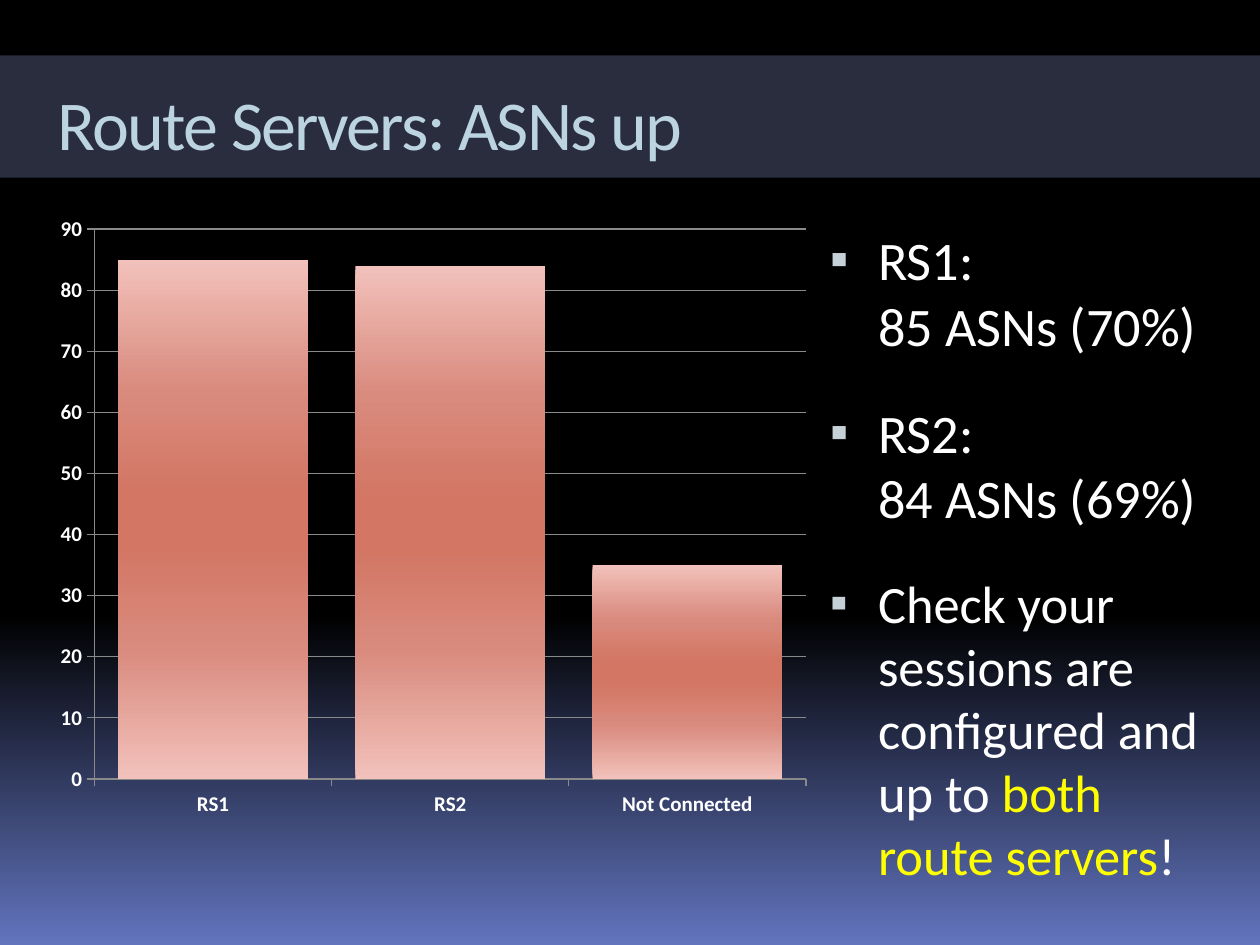
"""Build the route server status slide with its chart and bullet list."""
from dataclasses import dataclass

import pptx
import pptx.chart.data
import pptx.dml.color
import pptx.enum.chart
import pptx.enum.shapes
import pptx.enum.text
import pptx.oxml
import pptx.oxml.ns
import pptx.util

Inches = pptx.util.Inches
Pt = pptx.util.Pt
FONT = "Calibri"
COLORS = {
    "black": "000000", "sky": "6274BE", "band": "68729B", "title": "BCD4E0",
    "white": "FFFFFF", "accent": "FFFF00", "bullet": "C5D1D7", "axis": "8A8A8A",
    "bar_edge": "F2C1BB", "bar_soft": "D98B7E", "bar_core": "D37664",
}
BACKGROUND_STOPS = [(0, "black"), (65, "black"), (100, "sky")]
BAR_STOPS = [(0, "bar_edge"), (25, "bar_soft"), (45, "bar_core"),
             (55, "bar_core"), (75, "bar_soft"), (100, "bar_edge")]


@dataclass
class Span:
    text: str
    size: float
    color: str = "white"


BULLETS = [
    [Span("RS1:\n85 ASNs (70%)", 31)],
    [Span("RS2:\n84 ASNs (69%)", 31)],
    [Span("Check your sessions are configured and up to ", 30),
     Span("both route servers", 30, "accent"), Span("!", 30)],
]


def rgb(name: str) -> pptx.dml.color.RGBColor:
    """Return a named colour."""
    return pptx.dml.color.RGBColor.from_string(COLORS[name])


def add_xml(parent, tag: str, **attributes: str):
    """Append a drawing element with its attributes."""
    child = pptx.oxml.parse_xml(f"<a:{tag} {pptx.oxml.ns.nsdecls('a')}/>")
    for key, value in attributes.items():
        child.set(key, value)
    parent.append(child)
    return child


def set_attributes(target, values: dict) -> None:
    """Set every value on the target."""
    for key, value in values.items():
        setattr(target, key, value)


def set_gradient(fill, owner, stops: list) -> None:
    """Give a fill a top-down gradient."""
    fill.gradient()
    fill.gradient_angle = 270
    stop_list = owner.xpath(".//a:gsLst")[0]
    for old in list(stop_list):
        stop_list.remove(old)
    for position, name in stops:
        stop = add_xml(stop_list, "gs", pos=str(position * 1000))
        add_xml(stop, "srgbClr", val=COLORS[name])


def add_band(page) -> None:
    """Draw the translucent band behind the title."""
    band = page.shapes.add_shape(
        pptx.enum.shapes.MSO_SHAPE.RECTANGLE,
        Inches(0), Inches(0.44), Inches(10), Inches(0.97))
    band.shadow.inherit = False
    band.fill.solid()
    band.fill.fore_color.rgb = rgb("band")
    band.line.fill.background()
    color = band._element.spPr.xpath("./a:solidFill/a:srgbClr")[0]
    add_xml(color, "alpha", val="40000")


def add_text_box(page, bounds: tuple, insets: dict):
    """Add a wrapping text box and return its frame."""
    box = page.shapes.add_textbox(*map(Inches, bounds))
    frame = box.text_frame
    set_attributes(frame, {
        "word_wrap": True, "vertical_anchor": pptx.enum.text.MSO_ANCHOR.TOP,
        **{key: Inches(value) for key, value in insets.items()}})
    return frame


def add_span(para, span: Span) -> None:
    """Add formatted text, turning newlines into line breaks."""
    for index, line in enumerate(span.text.split("\n")):
        if index:
            para.add_line_break()
        run = para.add_run()
        run.text = line
        set_attributes(run.font, {"name": FONT, "size": Pt(span.size)})
        run.font.color.rgb = rgb(span.color)


def add_title(page) -> None:
    """Write the slide title."""
    frame = add_text_box(page, (0.39, 0.56, 9.11, 1),
                         {"margin_left": 0.07, "margin_top": 0.08})
    para = frame.paragraphs[0]
    add_span(para, Span("Route Servers: ASNs up", 40, "title"))
    para.runs[0].font._element.set("spc", "-100")


def add_bullets(page) -> None:
    """Write the bullet list beside the chart."""
    frame = add_text_box(page, (6.42, 1.75, 3.39, 5.15), {"margin_top": 0.05})
    for index, spans in enumerate(BULLETS):
        para = frame.add_paragraph() if index else frame.paragraphs[0]
        para.space_before = Pt(24)
        properties = para._p.get_or_add_pPr()
        properties.set("marL", str(Inches(0.45)))
        properties.set("indent", str(Inches(-0.38)))
        add_xml(add_xml(properties, "buClr"), "srgbClr", val=COLORS["bullet"])
        add_xml(properties, "buSzPct", val="95000")
        add_xml(properties, "buFont", typeface=FONT)
        add_xml(properties, "buChar", char="▪")
        for span in spans:
            add_span(para, span)


def add_layout(chart) -> None:
    """Fix the inner plot area inside the chart."""
    values = {"x": 0.065, "y": 0.04, "w": 0.92, "h": 0.88}
    parts = '<c:layoutTarget val="inner"/><c:xMode val="edge"/><c:yMode val="edge"/>'
    parts += "".join(f'<c:{key} val="{value}"/>' for key, value in values.items())
    layout = pptx.oxml.parse_xml(
        f"<c:layout {pptx.oxml.ns.nsdecls('c')}>"
        f"<c:manualLayout>{parts}</c:manualLayout></c:layout>")
    plot_area = chart._chartSpace.xpath(".//c:plotArea")[0]
    for old in plot_area.xpath("./c:layout"):
        plot_area.remove(old)
    plot_area.insert(0, layout)


def add_bar_chart(page) -> None:
    """Draw the column chart of connected networks."""
    data = pptx.chart.data.CategoryChartData()
    data.categories = ["RS1", "RS2", "Not Connected"]
    data.add_series("Series 1", [85, 84, 35])
    chart = page.shapes.add_chart(
        pptx.enum.chart.XL_CHART_TYPE.COLUMN_CLUSTERED,
        Inches(0.35), Inches(1.62), Inches(6.14), Inches(4.96), data).chart
    set_attributes(chart, {"has_legend": False, "has_title": False})
    set_attributes(chart.font, {"name": FONT, "size": Pt(12), "bold": True})
    chart.font.color.rgb = rgb("white")
    plot = chart.plots[0]
    set_attributes(plot, {"gap_width": 25, "overlap": 23, "vary_by_categories": False})
    series = plot.series[0]
    set_gradient(series.format.fill, series._element, BAR_STOPS)
    set_attributes(chart.value_axis, {
        "minimum_scale": 0, "maximum_scale": 90, "major_unit": 10,
        "has_major_gridlines": True})
    lines = [chart.value_axis.major_gridlines.format.line]
    for axis in (chart.category_axis, chart.value_axis):
        axis.major_tick_mark = pptx.enum.chart.XL_TICK_MARK.OUTSIDE
        lines.append(axis.format.line)
    for line in lines:
        line.color.rgb = rgb("axis")
        line.width = Pt(0.75)
    add_layout(chart)


def main() -> None:
    """Build and save the deck."""
    deck = pptx.Presentation()
    set_attributes(deck, {"slide_width": Inches(10), "slide_height": Inches(7.5)})
    page = deck.slides.add_slide(deck.slide_layouts[6])
    set_gradient(page.background.fill, page._element, BACKGROUND_STOPS)
    add_band(page)
    add_title(page)
    add_bullets(page)
    add_bar_chart(page)
    deck.save("out.pptx")


if __name__ == "__main__":
    main()
